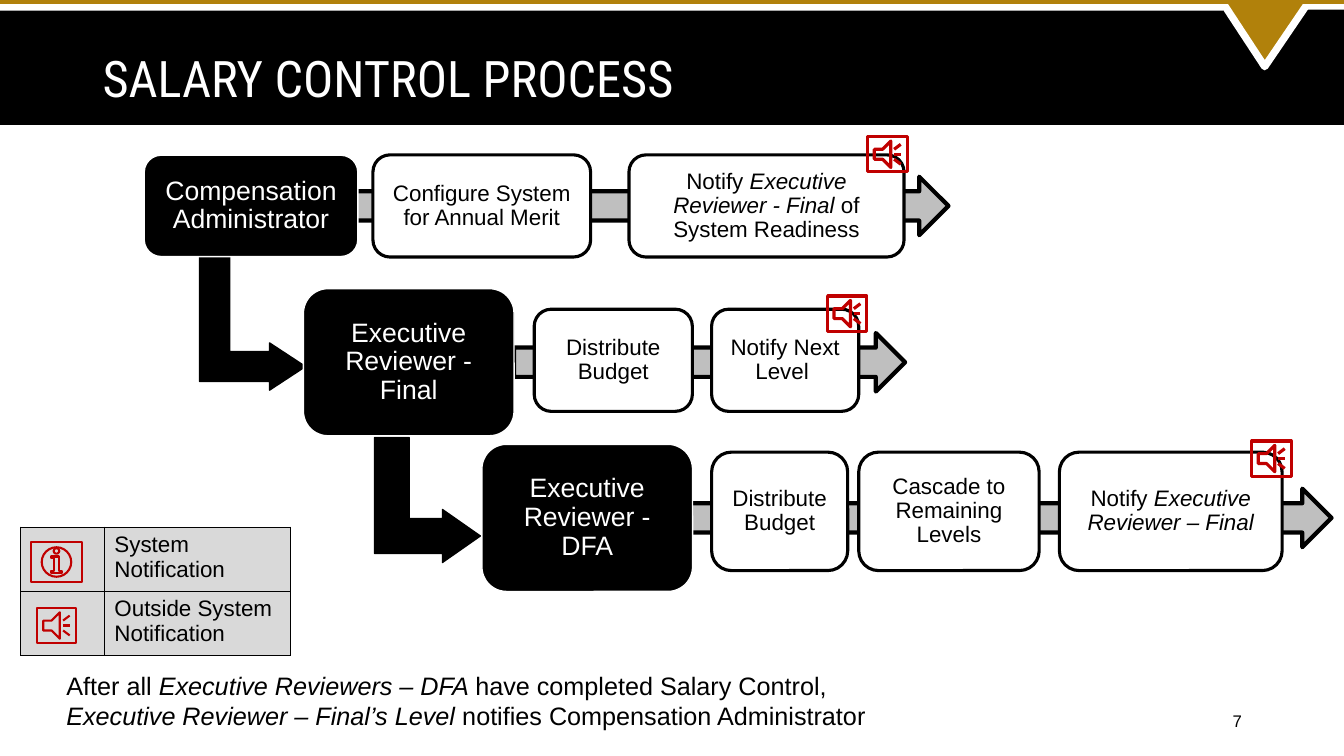
import dataclasses
import pptx
import pptx.dml.color
import pptx.enum.shapes
import pptx.enum.text
import pptx.oxml
import pptx.oxml.ns
import pptx.util

Pt = pptx.util.Pt
Shape = pptx.enum.shapes.MSO_SHAPE
Align = pptx.enum.text.PP_ALIGN
Anchor = pptx.enum.text.MSO_ANCHOR


@dataclasses.dataclass(frozen=True)
class Theme:
    black: str = "000000"
    white: str = "FFFFFF"
    gold: str = "B1810B"
    grey: str = "BFBFBF"
    pale: str = "D9D9D9"
    red: str = "C00000"
    title_font: str = "Roboto Condensed"
    body_font: str = "Arial"
    title: float = 36
    actor: float = 19
    note: float = 18
    step: float = 16
    number: float = 12
    corner: float = 0.167


theme = Theme()


@dataclasses.dataclass(frozen=True)
class Lane:
    box: tuple
    actor: tuple
    arrow_start: float
    step_height: float
    step_rise: float
    steps: tuple
    icon_overhang: tuple


LANES = (
    Lane((103, 110.9, 574.5, 72.4), ("Compensation Administrator", 152.6),
         126.7, 73, 0,
         ((163.4, 155.5, [("Configure System for Annual Merit", False)]),
          (346.3, 196.5, [("Notify ", False), ("Executive Reviewer - Final ", True),
                          ("of System Readiness", False)])),
         (25.9, 13)),
    Lane((216.7, 206.2, 429.8, 105.1), ("Executive Reviewer - Final", 150.5),
         150.5, 73, 1.4,
         ((164.9, 113, [("Distribute Budget", False)]),
          (291.6, 105.1, [("Notify Next Level ", False)])),
         (22.3, 9.4)),
    Lane((344.2, 317.4, 606.9, 105.1), ("Executive Reviewer - DFA", 150.5),
         135.3, 84.6, 4.7,
         ((164.1, 97.2, [("Distribute Budget", False)]),
          (269.2, 128.9, [("Cascade to Remaining Levels", False)]),
          (412.5, 159.1, [("Notify ", False), ("Executive Reviewer – Final", True)])),
         (21.6, 8)),
)


def rgb(colour):
    return pptx.dml.color.RGBColor.from_string(colour)


def add_shape(page, kind, box, fill=None, line=None, weight=1):
    shape = page.shapes.add_shape(kind, *map(Pt, box))
    shape.shadow.inherit = False
    if fill:
        shape.fill.solid()
        shape.fill.fore_color.rgb = rgb(fill)
    else:
        shape.fill.background()
    if line:
        shape.line.color.rgb = rgb(line)
        shape.line.width = Pt(weight)
    else:
        shape.line.fill.background()
    return shape


def write(frame, runs, size, colour=theme.black, font=theme.body_font,
          align=Align.LEFT, spacing=None):
    frame.word_wrap = True
    para = frame.paragraphs[0]
    para.alignment = align
    if spacing:
        para.line_spacing = spacing
    para.font.size = Pt(size)
    para.font.name = font
    para.font.color.rgb = rgb(colour)
    for text, italic in runs:
        span = para.add_run()
        span.text = text
        if italic:
            span.font.italic = True


def add_text(page, box, runs, size, anchor=Anchor.TOP, **style):
    frame = page.shapes.add_textbox(*map(Pt, box)).text_frame
    frame.vertical_anchor = anchor
    write(frame, runs, size, **style)


def add_card(page, box, runs, size, fill, line, weight, colour):
    card = add_shape(page, Shape.ROUNDED_RECTANGLE, box, fill, line, weight)
    card.adjustments[0] = theme.corner
    frame = card.text_frame
    frame.vertical_anchor = Anchor.MIDDLE
    inset = Pt(10.8 - 0.29 * theme.corner * min(box[2:]))
    frame.margin_left = frame.margin_right = inset
    frame.margin_top = frame.margin_bottom = inset
    write(frame, runs, size, colour, align=Align.CENTER, spacing=0.9)


def draw_header(page, box):
    left, top, width, height = box
    add_shape(page, Shape.RECTANGLE, box, theme.black)
    notch = add_shape(page, Shape.ISOSCELES_TRIANGLE,
                      (left + 871.2, top - 1.4, 65.5, 49), theme.gold, theme.white, 5.25)
    notch.rotation = 180
    notch.adjustments[0] = 0.509
    add_shape(page, Shape.RECTANGLE, (left, top, 873.7, 7.6), theme.white)
    add_shape(page, Shape.RECTANGLE, (left + 931.3, top, width - 931.3, 6.9), theme.white)
    add_shape(page, Shape.RECTANGLE, (left, top, width, 2.9), theme.gold)
    add_text(page, (left + 66.2, top + 28.8, 820, 59), [("SALARY CONTROL PROCESS", False)],
             theme.title, Anchor.MIDDLE, colour=theme.white, font=theme.title_font, spacing=0.9)


def draw_bend(page, box, adjustments):
    left, top, width, height = box
    shift = (height - width) / 2
    bend = add_shape(page, Shape.BENT_UP_ARROW, (left - shift, top + shift, height, width),
                     theme.black, theme.black)
    bend.rotation = 90
    for index, value in enumerate(adjustments):
        bend.adjustments[index] = value


def draw_lane(page, lane):
    left, top, width, height = lane.box
    middle = top + height / 2
    add_shape(page, Shape.RIGHT_ARROW,
              (left + lane.arrow_start, middle - 20.9, width - lane.arrow_start, 41.8),
              theme.grey, theme.black, 3)
    name, actor_width = lane.actor
    add_card(page, (left, top, actor_width, height), [(name, False)],
             theme.actor, theme.black, theme.white, 1, theme.white)
    step_top = middle - lane.step_height / 2 - lane.step_rise
    for offset, step_width, runs in lane.steps:
        add_card(page, (left + offset, step_top, step_width, lane.step_height), runs,
                 theme.step, theme.white, theme.black, 2.25, theme.black)
    across, above = lane.icon_overhang
    add_shape(page, Shape.ACTION_BUTTON_SOUND,
              (left + offset + step_width - across, step_top - above, 28.1, 25.2),
              line=theme.red, weight=2.25)


def add_borders(cell):
    properties = cell._tc.get_or_add_tcPr()
    for index, side in enumerate(("lnL", "lnR", "lnT", "lnB")):
        properties.insert(index, pptx.oxml.parse_xml(
            f'<a:{side} {pptx.oxml.ns.nsdecls("a")} w="12700"><a:solidFill>'
            f'<a:srgbClr val="{theme.black}"/></a:solidFill></a:{side}>'))


def draw_legend(page, box):
    left, top, width, height = box
    labels = ("System Notification", "Outside System Notification")
    table = page.shapes.add_table(len(labels), 2, *map(Pt, box)).table
    table.first_row = table.horz_banding = False
    table.columns[0].width = Pt(59.8)
    table.columns[1].width = Pt(width - 59.8)
    for row, label in enumerate(labels):
        table.rows[row].height = Pt(height / len(labels))
        for cell in table.rows[row].cells:
            cell.fill.solid()
            cell.fill.fore_color.rgb = rgb(theme.pale)
            add_borders(cell)
        write(table.cell(row, 1).text_frame, [(label, False)], theme.step)
    add_shape(page, Shape.ACTION_BUTTON_INFORMATION, (left + 7.2, top + 10.8, 36.7, 28.1),
              line=theme.red, weight=1.5)
    add_shape(page, Shape.ACTION_BUTTON_SOUND, (left + 11.5, top + 57.6, 28.1, 25.2),
              line=theme.red, weight=1.5)


def draw_footer(page, box):
    left, top, width, height = box
    add_text(page, (left + width - 216, top + 25.2, 216, 28.8), [("7", False)],
             theme.number, Anchor.MIDDLE, align=Align.RIGHT)
    add_text(page, (left, top, 637.2, height),
             [("After all ", False), ("Executive Reviewers – DFA ", True),
              ("have completed Salary Control, ", False),
              ("Executive Reviewer – Final’s Level ", True),
              ("notifies Compensation Administrator", False)], theme.note)


def main():
    deck = pptx.Presentation()
    deck.slide_width, deck.slide_height = Pt(960), Pt(540)
    page = deck.slides.add_slide(deck.slide_layouts[6])
    draw_header(page, (0, 0, 960, 89.3))
    draw_bend(page, (142.6, 182.9, 75.6, 95.8), (0.284, 0.223, 0.34))
    draw_bend(page, (267.5, 312.5, 75.6, 89.3), (0.328, 0.25, 0.358))
    for lane in LANES:
        draw_lane(page, lane)
    draw_legend(page, (14.8, 376.6, 193, 91.4))
    draw_footer(page, (40.3, 475.2, 853.9, 51.1))
    deck.save("out.pptx")


if __name__ == "__main__":
    main()
